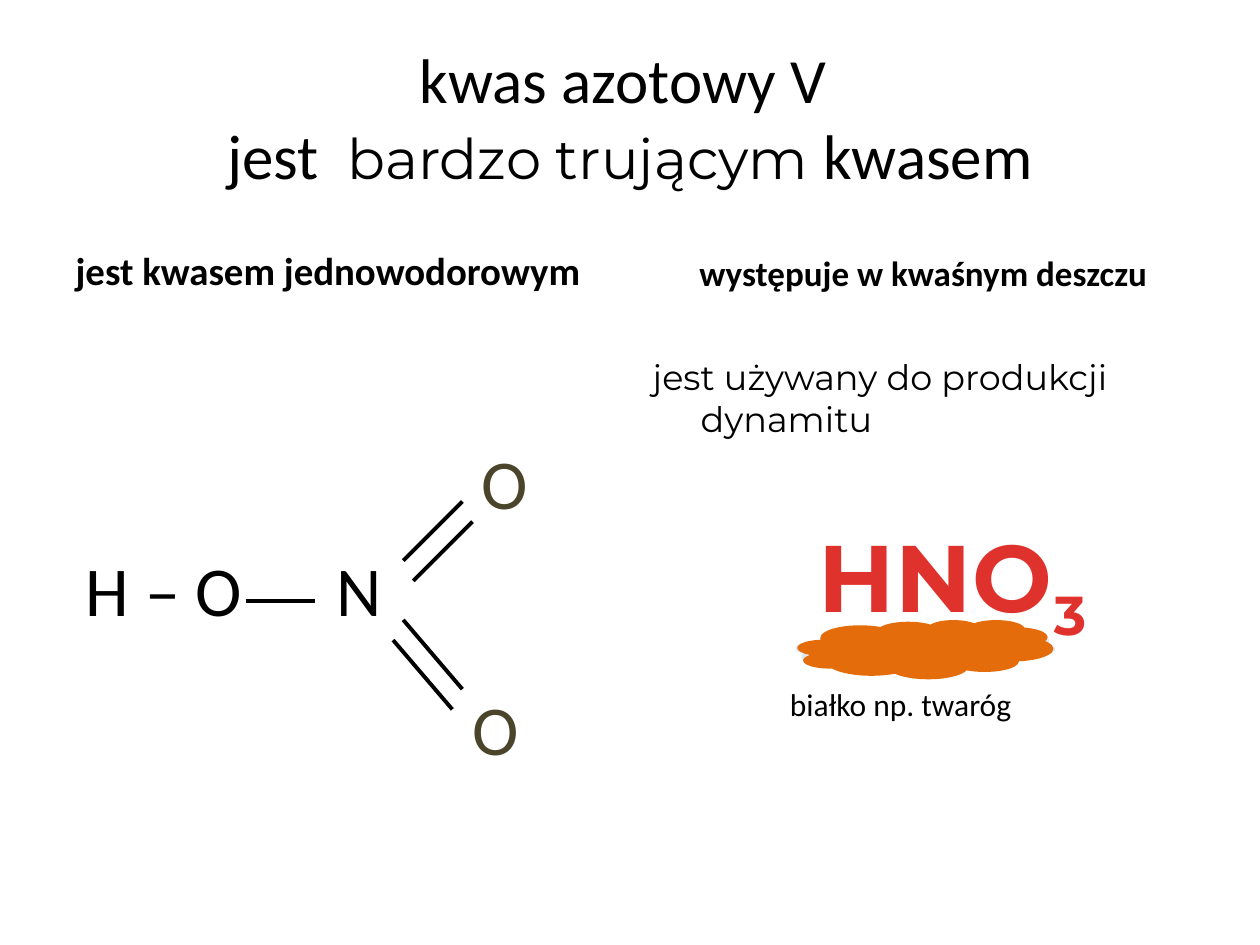
from dataclasses import dataclass

from lxml import etree
from pptx import Presentation
from pptx.dml.color import RGBColor
from pptx.enum import shapes, text
from pptx.oxml import ns
from pptx.util import Inches, Pt


@dataclass(frozen=True)
class Theme:
    sans: str = "Calibri"
    accent: str = "Montserrat"
    ink: str = "000000"
    oxygen: str = "4A452A"
    formula: str = "E0322D"
    curd: str = "E46C0A"
    halo: str = "DCE6F2"
    paper: str = "FFFFFF"
    title: float = 36
    title_accent: float = 32
    heading: float = 22.2
    body: float = 20
    caption: float = 18
    atom: float = 40
    display: float = 54
    bond: float = 2.25


THEME = Theme()


def place(sp, box):
    sp.left, sp.top, sp.width, sp.height = (Inches(v) for v in box)


def add_run(p, content, size, color=THEME.ink, font=THEME.sans, bold=False, spacing=0):
    r = p.add_run()
    r.text = content
    r.font.size, r.font.name, r.font.bold = Pt(size), font, bold
    r.font.color.rgb = RGBColor.from_string(color)
    if spacing:
        r._r.get_or_add_rPr().set("spc", str(round(spacing * 100)))
    return r


def fill_placeholder(sp, box, anchor, left=0.1, top=0.05):
    place(sp, box)
    tf = sp.text_frame
    tf.word_wrap = True
    tf.auto_size = text.MSO_AUTO_SIZE.NONE
    tf.vertical_anchor = anchor
    tf.margin_left, tf.margin_top = Inches(left), Inches(top)
    return tf.paragraphs[0]


def plain_list(p, indent=0.0):
    p.space_before = Pt(0)
    pPr = p._p.get_or_add_pPr()
    pPr.set("marL", str(Inches(indent)))
    pPr.set("indent", str(-Inches(indent)))
    etree.SubElement(pPr, ns.qn("a:buNone"))


def add_label(s, box, wrap=False):
    sp = s.shapes.add_textbox(*(Inches(v) for v in box))
    tf = sp.text_frame
    tf.word_wrap = wrap
    tf.auto_size = text.MSO_AUTO_SIZE.SHAPE_TO_FIT_TEXT
    p = tf.paragraphs[0]
    p.alignment = text.PP_ALIGN.LEFT if wrap else text.PP_ALIGN.CENTER
    return p


def add_bond(s, x, y, dx, dy):
    ends = (Inches(v) for v in (x, y, x + dx, y + dy))
    sp = s.shapes.add_connector(shapes.MSO_CONNECTOR.STRAIGHT, *ends)
    sp.line.width = Pt(THEME.bond)
    sp.line.color.rgb = RGBColor.from_string(THEME.ink)
    etree.SubElement(sp._element.spPr, ns.qn("a:effectLst"))


def add_cloud(s, box, fill, line=None):
    sp = s.shapes.add_shape(shapes.MSO_SHAPE.CLOUD, *(Inches(v) for v in box))
    sp.shadow.inherit = False
    sp.fill.solid()
    sp.fill.fore_color.rgb = RGBColor.from_string(fill)
    if line:
        sp.line.width = Pt(2)
        sp.line.color.rgb = RGBColor.from_string(line)
    else:
        sp.line.fill.background()


def title_region(s, box):
    p = fill_placeholder(s.shapes.title, box, text.MSO_ANCHOR.MIDDLE)
    p.alignment = text.PP_ALIGN.CENTER
    add_run(p, "kwas azotowy V ", THEME.title)
    p.add_line_break()
    add_run(p, "jest  ", THEME.title)
    add_run(p, "bardzo trującym ", THEME.title_accent, font=THEME.accent)
    add_run(p, "kwasem", THEME.title)


def heading_region(sp, box, content, size, left=0.1):
    p = fill_placeholder(sp, box, text.MSO_ANCHOR.BOTTOM, left)
    add_run(p, content, size, bold=True)


def structure_region(s, sp, box):
    x, y = box[:2]
    p = fill_placeholder(sp, box, text.MSO_ANCHOR.TOP, left=0.18, top=1.96)
    plain_list(p)
    add_run(p, "H – O", THEME.atom)
    add_run(p, " ", THEME.atom, spacing=45.2)
    add_run(p, "N", THEME.atom)
    for dx, dy in ((3.09, 1.06), (3.02, 3.01)):
        p = add_label(s, (x + dx, y + dy, 0.7, 0.77))
        add_run(p, " O", THEME.atom, THEME.oxygen)
    for shift in (0, 1):
        add_bond(s, x + 2.7 + 0.08 * shift, y + 2.07 + 0.16 * shift, 0.47, -0.47)
        add_bond(s, x + 2.7 - 0.08 * shift, y + 2.54 + 0.16 * shift, 0.47, 0.55)
    add_bond(s, x + 1.45, y + 2.39, 0.55, 0)


def uses_region(s, sp, box):
    x, y = box[:2]
    p = fill_placeholder(sp, box, text.MSO_ANCHOR.TOP, top=0.44)
    plain_list(p, indent=0.38)
    add_run(p, "jest używany do produkcji dynamitu", THEME.body, font=THEME.accent)

    p = add_label(s, (x + 1.25, y + 1.68, 2.46, 1.01))
    for content, baseline in (("HNO", 0), ("3", -25000)):
        r = add_run(p, content, THEME.display, THEME.formula, THEME.accent, True, 0.5)
        r._r.get_or_add_rPr().set("baseline", str(baseline))

    add_cloud(s, (x + 1.25, y + 2.62, 2.03, 0.31), THEME.paper, THEME.halo)
    add_cloud(s, (x + 1.25, y + 2.54, 2.03, 0.47), THEME.curd)
    p = add_label(s, (x + 1.09, y + 3.01, 2.11, 0.4), wrap=True)
    add_run(p, "białko np. twaróg", THEME.caption)


def main():
    prs = Presentation()
    prs.slide_width, prs.slide_height = Inches(10), Inches(7.5)
    s = prs.slides.add_slide(prs.slide_layouts.get_by_name("Comparison"))
    ph = {sp.placeholder_format.idx: sp for sp in s.placeholders}
    left, right, width = 0.5, 5.08, 4.42

    title_region(s, (left, 0.3, 9, 1.25))
    heading_region(ph[1], (left, 1.68, width, 0.7),
                   "jest kwasem jednowodorowym", THEME.heading)
    heading_region(ph[3], (right, 1.68, width, 0.7),
                   "występuje w kwaśnym deszczu", THEME.body, left=0.47)
    structure_region(s, ph[2], (left, 2.38, width, 4.32))
    uses_region(s, ph[4], (right, 2.38, width, 4.32))
    prs.save("out.pptx")


if __name__ == "__main__":
    main()
